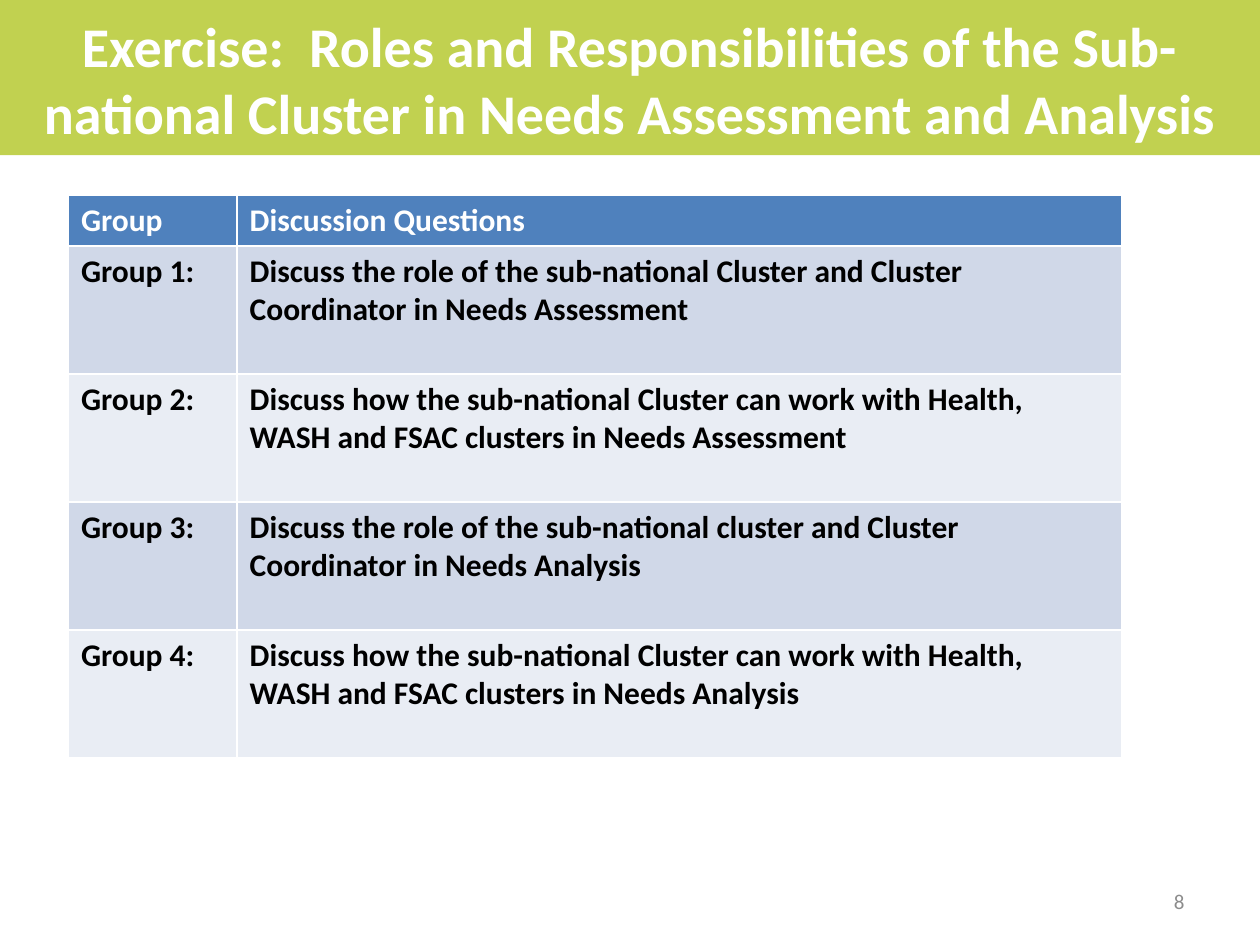
import pptx
import pptx.dml.color
import pptx.enum.shapes
import pptx.enum.text
import pptx.util

Cm = pptx.util.Cm
RGBColor = pptx.dml.color.RGBColor
Align = pptx.enum.text.PP_ALIGN
Anchor = pptx.enum.text.MSO_ANCHOR

# Content
HEADING = ("Exercise:  Roles and Responsibilities of the Sub-national "
           "Cluster in Needs Assessment and Analysis")
PAGE_NUMBER = "8"
COLUMNS = ("Group", "Discussion Questions")
QUESTIONS = [
    "Discuss the role of the sub-national Cluster and Cluster Coordinator in Needs Assessment",
    "Discuss how the sub-national Cluster can work with Health, WASH and FSAC clusters "
    "in Needs Assessment",
    "Discuss the role of the sub-national cluster and Cluster Coordinator in Needs Analysis",
    "Discuss how the sub-national Cluster can work with Health, WASH and FSAC clusters "
    "in Needs Analysis",
]

# Colours and sizes
GREEN = RGBColor(0xC1, 0xD1, 0x50)
BLUE = RGBColor(0x4F, 0x81, 0xBD)
BANDS = (RGBColor(0xD0, 0xD8, 0xE8), RGBColor(0xE9, 0xED, 0xF4))
WHITE = RGBColor(0xFF, 0xFF, 0xFF)
BLACK = RGBColor(0, 0, 0)
GREY = RGBColor(0x8C, 0x8C, 0x8C)
FONT = "Calibri"
SLIDE_WIDTH, SLIDE_HEIGHT = Cm(25.4), Cm(19.05)
HEADING_HEIGHT = Cm(3.18)
COLUMN_WIDTHS = (Cm(3.4), Cm(17.83))
HEADER_HEIGHT, QUESTION_HEIGHT = Cm(1.02), Cm(2.58)


def write(frame, text, *, size, color, bold=False, align=Align.LEFT, anchor=Anchor.TOP):
    frame.word_wrap = True
    frame.vertical_anchor = anchor
    paragraph = frame.paragraphs[0]
    paragraph.alignment = align
    run = paragraph.add_run()
    run.text = text
    run.font.name = FONT
    run.font.size = pptx.util.Pt(size)
    run.font.bold = bold
    run.font.color.rgb = color


def main():
    deck = pptx.Presentation()
    deck.slide_width, deck.slide_height = SLIDE_WIDTH, SLIDE_HEIGHT
    slide = deck.slides.add_slide(deck.slide_layouts[5])
    shapes = slide.shapes

    # Green band, placed behind the heading
    band = shapes.add_shape(pptx.enum.shapes.MSO_SHAPE.RECTANGLE,
                            0, Cm(-0.05), SLIDE_WIDTH, HEADING_HEIGHT)
    band.shadow.inherit = False
    band.fill.solid()
    band.fill.fore_color.rgb = GREEN
    band.line.fill.background()
    heading = shapes.title
    heading.element.addprevious(band.element)

    # Heading
    heading.left, heading.top = 0, 0
    heading.width, heading.height = SLIDE_WIDTH, HEADING_HEIGHT
    write(heading.text_frame, HEADING, size=32, color=WHITE, bold=True,
          align=Align.CENTER, anchor=Anchor.MIDDLE)

    # Page number
    page = shapes.add_textbox(Cm(18.2), Cm(17.65), Cm(5.93), Cm(1.02))
    write(page.text_frame, PAGE_NUMBER, size=12, color=GREY,
          align=Align.RIGHT, anchor=Anchor.MIDDLE)

    # Group questions
    rows = [COLUMNS] + [(f"Group {n}:", question) for n, question in enumerate(QUESTIONS, 1)]
    heights = [HEADER_HEIGHT] + [QUESTION_HEIGHT] * len(QUESTIONS)
    table = shapes.add_table(len(rows), len(COLUMNS), Cm(1.38), Cm(3.94),
                             sum(COLUMN_WIDTHS), sum(heights)).table
    for column, width in zip(table.columns, COLUMN_WIDTHS):
        column.width = width
    for r, (texts, height) in enumerate(zip(rows, heights)):
        table.rows[r].height = height
        for c, text in enumerate(texts):
            cell = table.cell(r, c)
            cell.fill.solid()
            cell.fill.fore_color.rgb = BANDS[(r - 1) % 2] if r else BLUE
            write(cell.text_frame, text, size=18, bold=True, color=BLACK if r else WHITE)

    deck.save("out.pptx")


if __name__ == "__main__":
    main()
